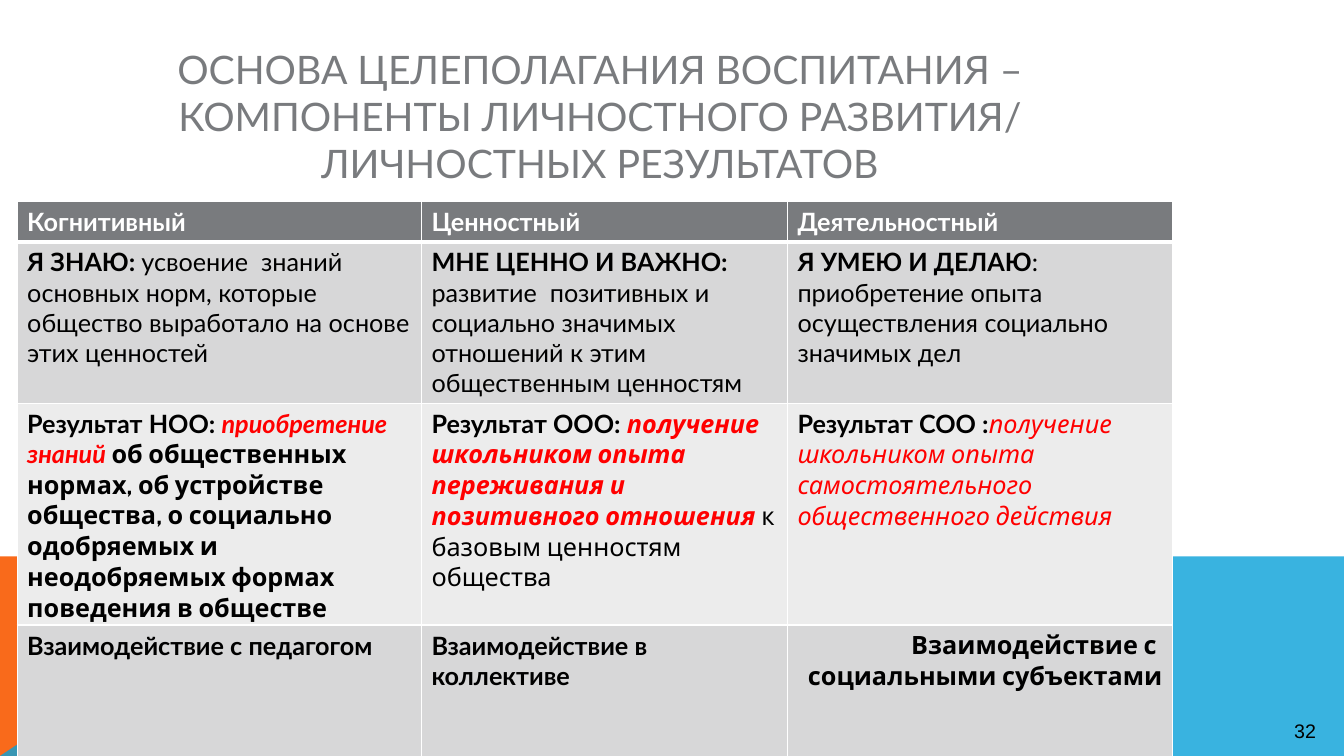
from lxml import etree
from pptx import Presentation
from pptx.dml.color import RGBColor
from pptx.enum.text import MSO_ANCHOR, MSO_AUTO_SIZE, PP_ALIGN
from pptx.oxml import parse_xml
from pptx.oxml.ns import nsdecls, qn
from pptx.util import Inches, Pt

LEFT, CENTER, RIGHT = PP_ALIGN.LEFT, PP_ALIGN.CENTER, PP_ALIGN.RIGHT
MIDDLE = MSO_ANCHOR.MIDDLE
NO_AUTOFIT = MSO_AUTO_SIZE.NONE
TITLE_ONLY = 5

WHITE = RGBColor(0xFF, 0xFF, 0xFF)
BLACK = RGBColor(0, 0, 0)
RED = RGBColor(0xFF, 0, 0)
GREY = RGBColor(0x79, 0x7B, 0x7E)
DARK_BAND = RGBColor(0xD7, 0xD7, 0xD8)
LIGHT_BAND = RGBColor(0xEC, 0xEC, 0xEC)
ORANGE = RGBColor(0xF9, 0x6A, 0x1B)
BLUE = RGBColor(0x08, 0xA1, 0xD9)

PLAIN = {"name": "Lato", "size": Pt(18), "bold": False, "italic": False, "color": BLACK}
BOLD = {**PLAIN, "bold": True}
HEADER = {**BOLD, "color": WHITE}
RED_LATO = {**BOLD, "color": RED, "italic": True}
CABIN = {**PLAIN, "name": "Cabin"}
CABIN_BOLD = {**CABIN, "bold": True}
CABIN_RED = {**CABIN, "color": RED, "italic": True}
CABIN_RED_BOLD = {**CABIN_RED, "bold": True}
TITLE = {**PLAIN, "size": Pt(28), "color": GREY}
NUMBER = {**PLAIN, "name": "Arial", "size": Pt(14)}

COLUMN_WIDTHS = [4.01, 3.63, 3.82]
ROW_HEIGHTS = [0.39, 1.52, 1.81, 1.41]
ROW_FILLS = [GREY, DARK_BAND, LIGHT_BAND, DARK_BAND]
TABLE_ROWS = [
    [
        [[("Когнитивный", HEADER)]],
        [[("Ценностный", HEADER)]],
        [[("Деятельностный", HEADER)]],
    ],
    [
        [[("Я ЗНАЮ: ", BOLD),
          ("усвоение  знаний основных норм, которые общество выработало "
           "на основе этих ценностей", PLAIN)]],
        [[("МНЕ ЦЕННО И ВАЖНО: ", BOLD),
          ("развитие  позитивных и социально значимых отношений к этим "
           "общественным ценностям", PLAIN)]],
        [[("Я УМЕЮ И ДЕЛАЮ", BOLD),
          (": приобретение опыта осуществления социально значимых дел", PLAIN)]],
    ],
    [
        [[("Результат НОО: ", BOLD),
          ("приобретение знаний ", RED_LATO),
          ("об общественных нормах, об устройстве общества, о социально одобряемых "
           "и неодобряемых формах поведения в обществе", CABIN_BOLD)]],
        [[("Результат ООО: ", BOLD),
          ("получение школьником опыта переживания и позитивного отношения ",
           CABIN_RED_BOLD),
          ("к базовым ценностям общества", CABIN)]],
        [[("Результат СОО :", BOLD),
          ("получение школьником опыта самостоятельного общественного действия",
           CABIN_RED)]],
    ],
    [
        [[("Взаимодействие с педагогом", BOLD)]],
        [[("Взаимодействие в коллективе", BOLD)]],
        [[("Взаимодействие с ", CABIN_BOLD)],
         [("социальными субъектами", CABIN_BOLD)]],
    ],
]


class SlideBuilder:
    """Draws styled elements on the current slide."""

    def __init__(self, presentation):
        self.slide = presentation.slides.add_slide(presentation.slide_layouts[TITLE_ONLY])

    def fill_text(self, frame, paragraphs, alignment):
        for index, runs in enumerate(paragraphs):
            paragraph = frame.add_paragraph() if index else frame.paragraphs[0]
            paragraph.alignment = alignment
            for text, style in runs:
                run = paragraph.add_run()
                run.text = text
                for key, value in style.items():
                    if key == "color":
                        run.font.color.rgb = value
                    else:
                        setattr(run.font, key, value)

    def title(self, box, text):
        shape = self.slide.shapes.title
        for key, value in zip(("left", "top", "width", "height"), box):
            setattr(shape, key, Inches(value))
        frame = shape.text_frame
        settings = {"word_wrap": True, "auto_size": NO_AUTOFIT, "vertical_anchor": MIDDLE}
        for key, value in settings.items():
            setattr(frame, key, value)
        self.fill_text(frame, [[(text, TITLE)]], CENTER)

    def text(self, box, text, style):
        frame = self.slide.shapes.add_textbox(*map(Inches, box)).text_frame
        frame.word_wrap = True
        self.fill_text(frame, [[(text, style)]], CENTER)

    def polygon(self, points, color, opacity=100):
        start, *others = [(Inches(x), Inches(y)) for x, y in points]
        builder = self.slide.shapes.build_freeform(*start)
        builder.add_line_segments(others, close=True)
        shape = builder.convert_to_shape()
        shape.shadow.inherit = False
        shape.line.fill.background()
        shape.fill.solid()
        shape.fill.fore_color.rgb = color
        if opacity < 100:
            color_element = shape.element.spPr.find(qn("a:solidFill")).find(qn("a:srgbClr"))
            etree.SubElement(color_element, qn("a:alpha"), val=str(opacity * 1000))

    def border(self, cell, side, width):
        cell._tc.get_or_add_tcPr().append(parse_xml(
            f'<a:ln{side} {nsdecls("a")} w="{int(Pt(width))}"><a:solidFill>'
            f'<a:srgbClr val="{WHITE}"/></a:solidFill></a:ln{side}>'))

    def table(self, left, top):
        table = self.slide.shapes.add_table(
            len(ROW_HEIGHTS), len(COLUMN_WIDTHS), Inches(left), Inches(top),
            Inches(sum(COLUMN_WIDTHS)), Inches(sum(ROW_HEIGHTS))).table
        table.first_row = table.horz_banding = False
        for column, width in zip(table.columns, COLUMN_WIDTHS):
            column.width = Inches(width)
        for row_index, contents in enumerate(TABLE_ROWS):
            table.rows[row_index].height = Inches(ROW_HEIGHTS[row_index])
            for column_index, paragraphs in enumerate(contents):
                cell = table.cell(row_index, column_index)
                top_width = 3 if row_index == 1 else 1
                bottom_width = 3 if row_index == 0 else 1
                for side, width in zip("LRTB", (1, 1, top_width, bottom_width)):
                    self.border(cell, side, width)
                cell.fill.solid()
                cell.fill.fore_color.rgb = ROW_FILLS[row_index]
                alignment = RIGHT if len(paragraphs) > 1 else LEFT
                self.fill_text(cell.text_frame, paragraphs, alignment)


def main():
    presentation = Presentation()
    presentation.slide_width = Inches(13.33)
    presentation.slide_height = Inches(7.5)
    builder = SlideBuilder(presentation)
    builder.polygon([(0, 7.5), (0, 5.52), (2.98, 5.52), (5.21, 7.5)], ORANGE)
    builder.polygon([(0, 7.5), (2.97, 5.52), (13.33, 5.52), (13.33, 7.5)], BLUE, 80)
    builder.text((12.56, 7.08, 0.77, 0.34), "32", NUMBER)
    builder.title(
        (0.67, 0.35, 10.56, 1.59),
        "ОСНОВА ЦЕЛЕПОЛАГАНИЯ ВОСПИТАНИЯ – КОМПОНЕНТЫ ЛИЧНОСТНОГО РАЗВИТИЯ/ "
        "ЛИЧНОСТНЫХ РЕЗУЛЬТАТОВ")
    builder.table(0.17, 2)
    presentation.save("out.pptx")


if __name__ == "__main__":
    main()
